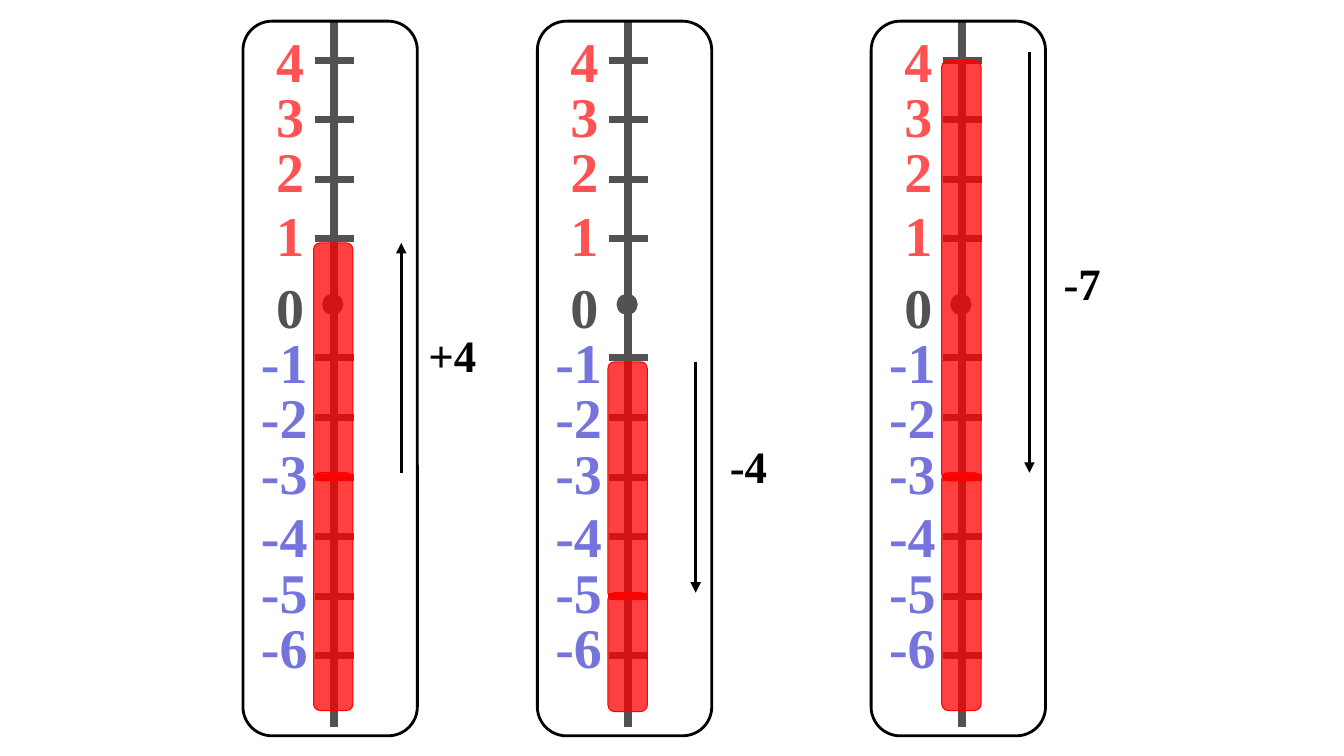
from dataclasses import dataclass

from lxml.etree import SubElement
from pptx import Presentation
from pptx.dml.color import RGBColor
from pptx.enum.shapes import MSO_CONNECTOR as Connector, MSO_SHAPE as Shape
from pptx.enum.text import MSO_AUTO_SIZE as AutoSize
from pptx.oxml.ns import qn
from pptx.slide import Slide
from pptx.util import Inches, Pt

COLORS = {
    "ink": "000000",
    "paper": "FFFFFF",
    "mercury": "FF0000",
    "negative": "3333CC",
}
FONT = "Times New Roman"
ZERO_Y = 2.96
DEGREE = 0.591
TICK_WIDTH = 0.39


@dataclass(frozen=True)
class ScaleLabel:
    value: int
    top: float
    width: float


@dataclass(frozen=True)
class Bar:
    top: float
    height: float


@dataclass(frozen=True)
class Change:
    text: str
    left: float
    top: float
    width: float
    start: float
    end: float


@dataclass(frozen=True)
class Thermometer:
    axis: float
    bars: tuple[Bar, Bar]
    change: Change


SCALE = (
    ScaleLabel(4, 0.21, 0.39),
    ScaleLabel(3, 0.76, 0.59),
    ScaleLabel(2, 1.31, 0.39),
    ScaleLabel(1, 1.94, 0.39),
    ScaleLabel(0, 2.65, 0.59),
    ScaleLabel(-1, 3.2, 0.98),
    ScaleLabel(-2, 3.75, 0.98),
    ScaleLabel(-3, 4.3, 0.98),
    ScaleLabel(-4, 4.93, 0.98),
    ScaleLabel(-5, 5.48, 0.98),
    ScaleLabel(-6, 6.03, 0.98),
)
THERMOMETERS = (
    Thermometer(3.31, (Bar(4.69, 2.36), Bar(2.41, 2.36)),
                Change("+4", 4.15, 3.2, 0.68, 4.69, 2.41)),
    Thermometer(6.23, (Bar(5.88, 1.18), Bar(3.59, 2.36)),
                Change("-4", 7.14, 4.3, 0.57, 3.59, 5.88)),
    Thermometer(9.54, (Bar(4.69, 2.36), Bar(0.6, 4.17)),
                Change("-7", 10.45, 2.49, 0.57, 0.52, 4.69)),
)


def add_line(page: Slide, x1: float, y1: float, x2: float, y2: float,
             width: float, arrow: bool = False) -> None:
    line = page.shapes.add_connector(
        Connector.STRAIGHT, Inches(x1), Inches(y1), Inches(x2), Inches(y2))
    line.line.color.rgb = RGBColor.from_string(COLORS["ink"])
    line.line.width = Pt(width)
    properties = line._element.spPr
    if arrow:
        SubElement(properties.find(qn("a:ln")), qn("a:tailEnd"), type="triangle")
    SubElement(properties, qn("a:effectLst"))


def add_filled(page: Slide, kind: Shape, left: float, top: float, width: float,
               height: float, fill: str, outline: str, weight: float = 0.75,
               opacity: int = 100) -> None:
    shape = page.shapes.add_shape(
        kind, Inches(left), Inches(top), Inches(width), Inches(height))
    shape.shadow.inherit = False
    shape.fill.solid()
    shape.fill.fore_color.rgb = RGBColor.from_string(COLORS[fill])
    shape.line.color.rgb = RGBColor.from_string(COLORS[outline])
    shape.line.width = Pt(weight)
    if opacity < 100:
        color = shape._element.spPr.find(qn("a:solidFill")).find(qn("a:srgbClr"))
        SubElement(color, qn("a:alpha"), val=str(opacity * 1000))


def add_text(page: Slide, text: str, left: float, top: float, width: float,
             height: float, size: int, color: str, scale: bool) -> None:
    box = page.shapes.add_textbox(
        Inches(left), Inches(top), Inches(width), Inches(height))
    frame = box.text_frame
    frame.word_wrap = scale
    frame.auto_size = AutoSize.SHAPE_TO_FIT_TEXT
    para = frame.paragraphs[0]
    para.text = text
    if scale:
        spacing = SubElement(para._p.get_or_add_pPr(), qn("a:spcBef"))
        SubElement(spacing, qn("a:spcPct"), val="50000")
    para.font.name = FONT
    para.font.size = Pt(size)
    para.font.bold = True
    para.font.color.rgb = RGBColor.from_string(COLORS[color])


def add_scale(page: Slide, axis: float) -> None:
    add_line(page, axis, 0.21, axis, 7.21, 5.5)
    for label in SCALE:
        value = label.value
        color = "mercury" if value > 0 else "negative" if value < 0 else "ink"
        left = axis - (0.82 if value < 0 else 0.67)
        add_text(page, str(value), left, label.top, label.width, 0.77, 40, color, True)
        if value:
            y = ZERO_Y - value * DEGREE
            add_line(page, axis - 0.19, y, axis - 0.19 + TICK_WIDTH, y, 5)
        else:
            add_filled(page, Shape.OVAL, axis - 0.11, 2.92, 0.2, 0.2, "ink", "ink")


def add_thermometer(page: Slide, item: Thermometer) -> None:
    add_scale(page, item.axis)
    add_filled(page, Shape.ROUNDED_RECTANGLE, item.axis - 0.9, 0.21, 1.73, 7.09,
               "paper", "ink", 2, 32)
    for bar in item.bars:
        add_filled(page, Shape.ROUNDED_RECTANGLE, item.axis - 0.2, bar.top,
                   TICK_WIDTH, bar.height, "mercury", "mercury", opacity=75)
    change = item.change
    arrow_x = item.axis + 0.67
    add_line(page, arrow_x, change.start, arrow_x, change.end, 2.5, arrow=True)
    add_text(page, change.text, change.left, change.top, change.width, 0.63, 32,
             "ink", False)


def main() -> None:
    """Draw three thermometers showing changes of +4, -4 and -7."""
    deck = Presentation()
    deck.slide_width = Inches(13.33)
    deck.slide_height = Inches(7.5)
    page = deck.slides.add_slide(deck.slide_layouts[6])
    for item in THERMOMETERS:
        add_thermometer(page, item)
    deck.save("out.pptx")


if __name__ == "__main__":
    main()
